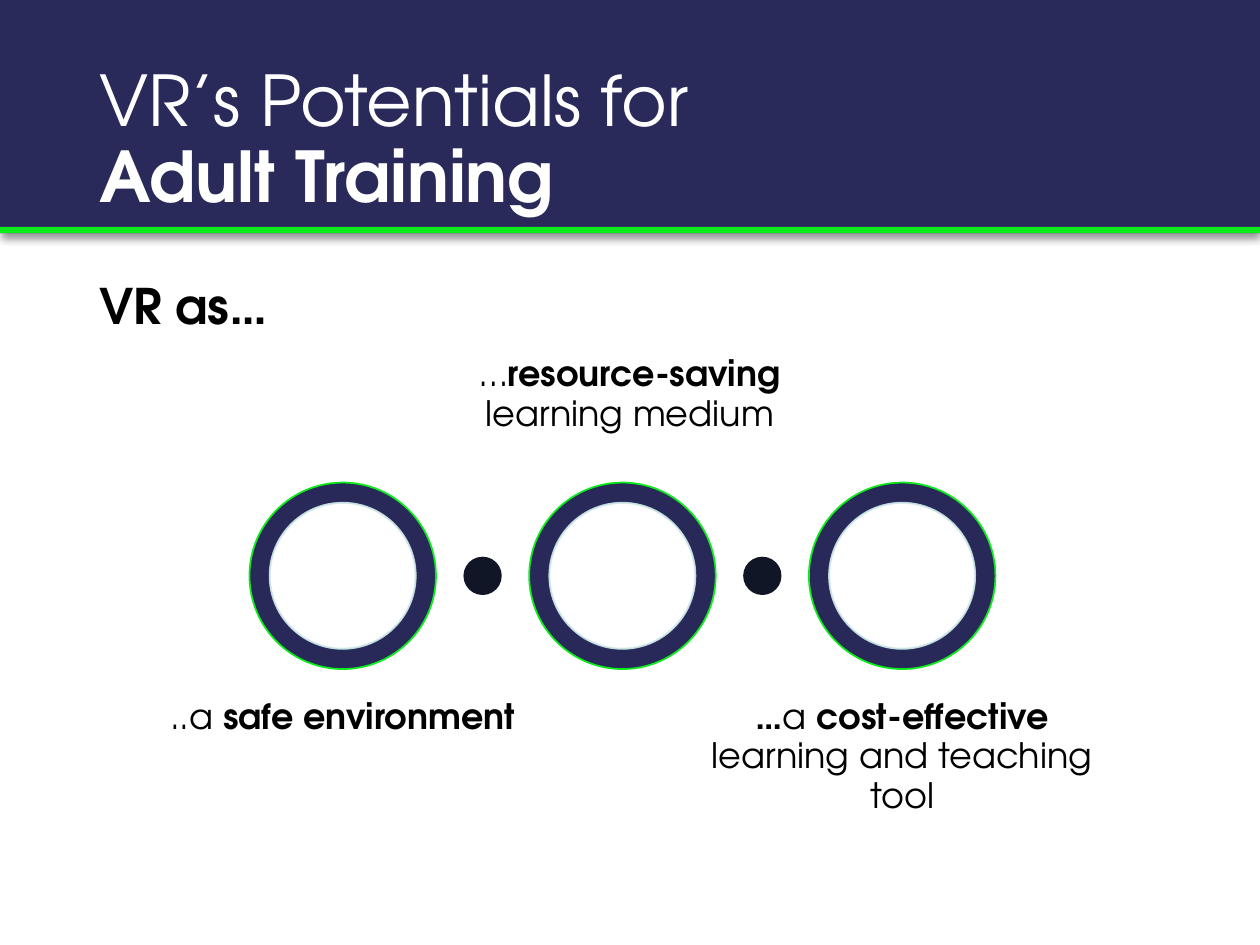
from lxml import etree
from pptx import Presentation
from pptx.dml.color import RGBColor
from pptx.enum.shapes import MSO_SHAPE
from pptx.enum.text import MSO_ANCHOR, PP_ALIGN
from pptx.oxml.ns import qn
from pptx.util import Inches, Pt

RECT, OVAL, DONUT = MSO_SHAPE.RECTANGLE, MSO_SHAPE.OVAL, MSO_SHAPE.DONUT
DOT = MSO_SHAPE.FLOWCHART_CONNECTOR
TOP, MIDDLE = MSO_ANCHOR.TOP, MSO_ANCHOR.MIDDLE
LEFT, CENTER = PP_ALIGN.LEFT, PP_ALIGN.CENTER

FONT = "TeX Gyre Adventor"
NAVY, RING_NAVY, GREEN = "292A5A", "282958", "0CEC1B"
INK, PALE, WHITE, BLACK = "111626", "CFDEEF", "FFFFFF", "000000"


def rgb(value):
    return RGBColor.from_string(value)


def add_figure(slide, preset, box, fill, line=None):
    figure = slide.shapes.add_shape(preset, *map(Inches, box))
    figure.shadow.inherit = False
    figure.fill.solid()
    figure.fill.fore_color.rgb = rgb(fill)
    if line:
        figure.line.color.rgb = rgb(line)
        figure.line.width = Pt(1)
    else:
        figure.line.fill.background()
    return figure


def add_circle(slide, preset, center, size, fill, line):
    x, y = center
    return add_figure(slide, preset, (x - size / 2, y - size / 2, size, size), fill, line)


def set_alpha(color_format, percent):
    for color in color_format.iter(qn("a:srgbClr")):
        etree.SubElement(color, qn("a:alpha"), val=str(percent * 1000))


def add_drop_shadow(figure, color, alpha, blur, distance):
    effects = figure._element.spPr.find(qn("a:effectLst"))
    shadow = etree.SubElement(
        effects, qn("a:outerShdw"), blurRad=str(Pt(blur)), dist=str(Pt(distance)),
        dir="5400000", algn="t", rotWithShape="0")
    etree.SubElement(shadow, qn("a:srgbClr"), val=color)
    set_alpha(shadow, alpha)


def add_text(slide, box, runs, size, color=BLACK, align=LEFT, anchor=TOP, spacing=0.9):
    """Runs are (text, bold) pairs; None stands for a line break."""
    frame = slide.shapes.add_textbox(*map(Inches, box)).text_frame
    frame.word_wrap = True
    frame.vertical_anchor = anchor
    paragraph = frame.paragraphs[0]
    paragraph.alignment = align
    paragraph.line_spacing = spacing
    for item in runs:
        if item is None:
            paragraph.add_line_break()
            continue
        run = paragraph.add_run()
        run.text, run.font.bold = item
        run.font.name = FONT
        run.font.size = Pt(size)
        run.font.color.rgb = rgb(color)


def add_header(slide, box):
    left, top, width, height = box
    band = add_figure(slide, RECT, box, NAVY)
    add_drop_shadow(band, BLACK, alpha=40, blur=4, distance=3)
    rule = 0.05
    add_figure(slide, RECT, (left, top + height - rule, width, rule), GREEN)
    add_text(slide, (left + 0.69, top + 0.4, width - 1.38, height - 0.4),
             [("VR’s Potentials for", False), None, ("Adult Training", True)],
             40, WHITE, anchor=MIDDLE)


def add_ring_chain(slide, box, count=3):
    left, top, width, size = box
    pitch = (width - size) / (count - 1)
    middle = top + size / 2
    for index in range(count):
        x = left + size / 2 + index * pitch
        ring = add_circle(slide, DONUT, (x, middle), size, RING_NAVY, GREEN)
        ring.adjustments[0] = 0.11
        # Translucent disc inside the ring
        disc = add_circle(slide, OVAL, (x, middle), 1.16, WHITE, PALE)
        set_alpha(disc._element.spPr, 90)
        # Dot between neighbouring rings
        if index < count - 1:
            add_circle(slide, DOT, (x + pitch / 2, middle), 0.29, INK, INK)


def add_captions(slide, captions):
    for box, runs in captions:
        add_text(slide, box, runs, 20, align=CENTER, spacing=0.94)


def main():
    prs = Presentation()
    prs.slide_width, prs.slide_height = Inches(10), Inches(7.5)
    slide = prs.slides.add_slide(prs.slide_layouts[6])

    add_header(slide, (0, 0, 10, 1.85))
    add_ring_chain(slide, (1.98, 3.83, 5.92, 1.48))
    add_captions(slide, [
        ((1.17, 5.49, 3.1, 0.9), [("..a ", False), ("safe environment", True)]),
        ((5.31, 5.49, 3.7, 1.1), [("…", True), ("a", False), (" cost-effective ", True),
                                  ("learning and teaching tool", False)]),
        ((3.45, 2.77, 3.1, 0.9), [("…", False), ("resource-saving ", True),
                                  ("learning medium", False)]),
    ])
    # Lead-in line
    add_text(slide, (0.69, 2.19, 8.62, 4.76), [("VR as…", True)], 28)

    prs.save("out.pptx")


if __name__ == "__main__":
    main()
